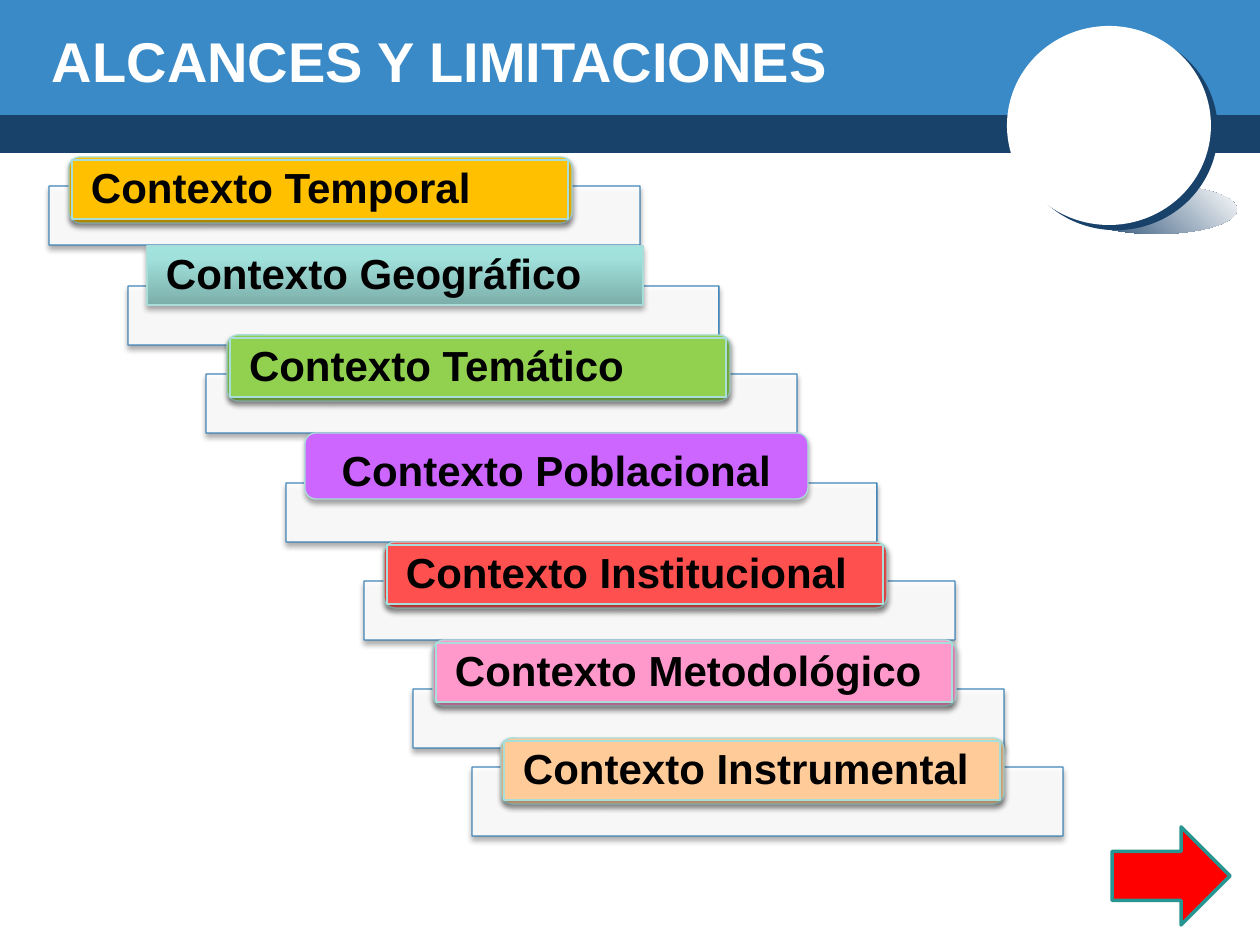
from lxml import etree
from pptx import Presentation
from pptx.dml.color import RGBColor
from pptx.enum.shapes import MSO_SHAPE
from pptx.enum.text import MSO_ANCHOR, PP_ALIGN
from pptx.oxml.ns import qn
from pptx.util import Pt

PX = 914400 / 126
RECT = MSO_SHAPE.RECTANGLE
ROUND = MSO_SHAPE.ROUNDED_RECTANGLE
OVAL = MSO_SHAPE.OVAL
ARROW = MSO_SHAPE.RIGHT_ARROW
MIDDLE = MSO_ANCHOR.MIDDLE
LEFT, CENTER = PP_ALIGN.LEFT, PP_ALIGN.CENTER

EDGE = "A9DDD9"
TEAL = [(0, "7CAEAA"), (80, "A1E1DC"), (100, "A1E4DE")]
STEPS = [
    ("Contexto Temporal", "FFC000", "pair", (49, 186, 59), (69, 157, 503)),
    ("Contexto Geográfico", TEAL, "flat", (128, 286, 59), (147, 246, 496)),
    ("Contexto Temático", "92D050", "pair", (206, 374, 59), (227, 335, 503)),
    ("Contexto Poblacional", "CC66FF", "round", (286, 483, 59), (305, 433, 503)),
    ("Contexto Institucional", "FF5050", "pair", (364, 581, 59), (384, 542, 503)),
    ("Contexto Metodológico", "FF99CC", "pair", (413, 689, 59), (433, 640, 523)),
    ("Contexto Instrumental", "FFCC99", "pair", (472, 767, 69), (501, 738, 503)),
]


def px(n):
    return round(n * PX)


def rgb(code):
    return RGBColor.from_string(code)


def shade(shape, stops, angle):
    shape.fill.gradient()
    shape.fill.gradient_angle = angle
    items = shape.element.spPr.find(".//" + qn("a:gsLst"))
    for old in list(items):
        items.remove(old)
    for pos, code in stops:
        stop = etree.SubElement(items, qn("a:gs"), pos=str(pos * 1000))
        etree.SubElement(stop, qn("a:srgbClr"), val=code)


def cast(shape, code, alpha, blur, dist, angle):
    effects = shape.element.spPr.find(qn("a:effectLst"))
    shadow = etree.SubElement(
        effects, qn("a:outerShdw"), blurRad=str(Pt(blur)), dist=str(Pt(dist)),
        dir=str(angle * 60000), algn="ctr", rotWithShape="0")
    color = etree.SubElement(shadow, qn("a:srgbClr"), val=code)
    etree.SubElement(color, qn("a:alpha"), val=str(alpha * 1000))


def fade(shape, alpha):
    for color in shape.element.spPr.iter(qn("a:srgbClr")):
        etree.SubElement(color, qn("a:alpha"), val=str(alpha * 1000))


def draw(shapes, kind, box, fill, line=None, width=0.75):
    shape = shapes.add_shape(kind, *map(px, box))
    shape.shadow.inherit = False
    if isinstance(fill, list):
        shade(shape, fill, 90)
    else:
        shape.fill.solid()
        shape.fill.fore_color.rgb = rgb(fill)
    if line:
        shape.line.color.rgb = rgb(line)
        shape.line.width = Pt(width)
    else:
        shape.line.fill.background()
    return shape


def soft(shape):
    cast(shape, "000000", 35, 3.1, 1.8, 90)


def label(shape, text, size, color, align, insets):
    frame = shape.text_frame
    frame.text = text
    frame.vertical_anchor = MIDDLE
    frame.margin_left, frame.margin_top, frame.margin_right, frame.margin_bottom = map(px, insets)
    para = frame.paragraphs[0]
    para.alignment = align
    para.font.name = "Arial"
    para.font.size = Pt(size)
    para.font.bold = True
    para.font.color.rgb = rgb(color)
    return para


def banner(slide, box):
    x, y, w, h = box
    draw(slide.shapes, RECT, (x, y + 110, w, h - 110), "19426B")
    draw(slide.shapes, RECT, (x, y, w, 115), "398AC7")
    title = slide.shapes.title
    title.left, title.top, title.width, title.height = map(px, (x + 39, y + 20, 808, 81))
    label(title, "ALCANCES Y LIMITACIONES", 32, "FFFFFF", LEFT, (13, 6, 13, 6))
    title.text_frame.word_wrap = False
    slide.shapes.element.append(title.element)


def badge(slide, box):
    x, y, w, h = box
    group = slide.shapes.add_group_shape()
    base = draw(group.shapes, OVAL, (x + 69, y + 159, w - 69, h - 159), "FFFFFF")
    shade(base, [(0, "19426B"), (100, "FFFFFF")], 45)
    disc = draw(group.shapes, OVAL, (x, y, 204, 199), "FFFFFF")
    cast(disc, "19426B", 100, 0, 5, 37)


def card(slide, box, text, fill, kind):
    x, y, w, h = box
    if kind == "pair":
        shapes = slide.shapes.add_group_shape().shapes
        soft(draw(shapes, ROUND, box, fill, EDGE))
        face = draw(shapes, RECT, (x + 3, y + 3, w - 7, h - 7), fill, EDGE)
    else:
        face = draw(slide.shapes, ROUND if kind == "round" else RECT, box, fill, EDGE)
    soft(face)
    if kind == "round":
        label(face, text, 24, "000000", CENTER, (13, 12, 13, 4))
    else:
        para = label(face, text, 24, "000000", LEFT, (19, 0, 19, 0))
        para.line_spacing = 0.9


def step(slide, text, fill, kind, back, front):
    x, y, h = back
    frame = draw(slide.shapes, RECT, (x, y, 591, h), "FFFFFF", "2F7BB3")
    fade(frame, 90)
    soft(frame)
    x, y, w = front
    card(slide, (x, y, w, 59 if kind == "flat" else 66), text, fill, kind)


def main():
    deck = Presentation()
    deck.slide_width, deck.slide_height = px(1260), px(945)
    slide = deck.slides.add_slide(deck.slide_layouts[5])
    banner(slide, (0, 0, 1260, 153))
    badge(slide, (1007, 26, 230, 208))
    for item in STEPS:
        step(slide, *item)
    draw(slide.shapes, ARROW, (1112, 827, 118, 98), "FF0000", "279590", 2)
    deck.save("out.pptx")


if __name__ == "__main__":
    main()
